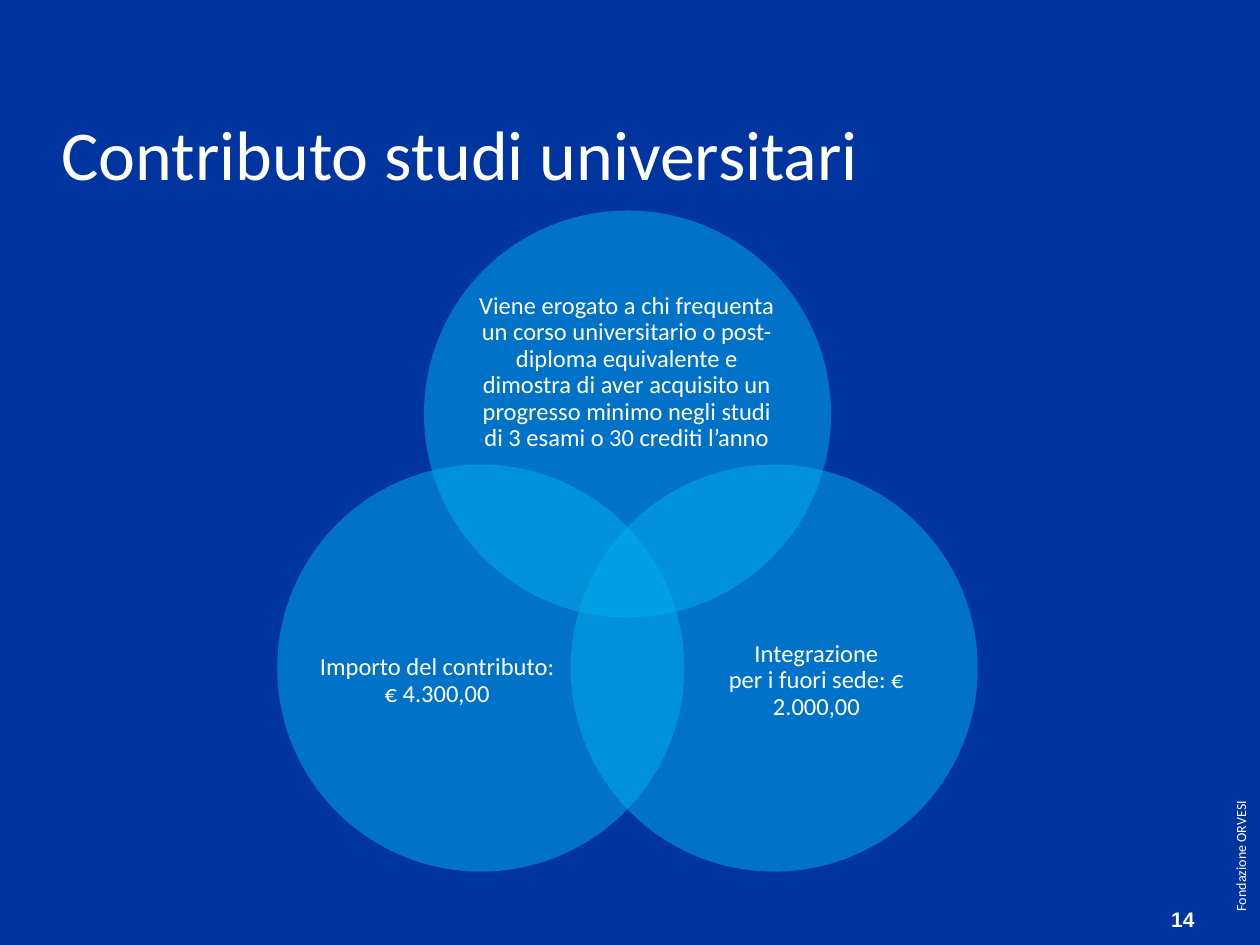
"""Build the slide on the university study grant as a three-circle Venn diagram."""
from dataclasses import dataclass
from math import cos, radians, sin

from lxml.etree import SubElement
from pptx import Presentation
from pptx.dml.color import RGBColor
from pptx.enum.shapes import MSO_SHAPE
from pptx.enum.text import MSO_ANCHOR, MSO_AUTO_SIZE, PP_ALIGN
from pptx.oxml.ns import qn
from pptx.util import Pt

TITLE = "Contributo studi universitari"
FOOTER = "Fondazione ORVESI"
PAGE_NUMBER = "14"
CIRCLES = [
    {"angle": -90, "text_area": (272.9, 160.6, 170.6, 104.4), "lines": [
        "Viene erogato a chi frequenta un corso universitario o post-diploma "
        "equivalente e dimostra di aver acquisito un progresso minimo negli "
        "studi di 3 esami o 30 crediti l’anno"]},
    {"angle": 30, "text_area": (396.7, 325.4, 139.7, 127.4), "lines": [
        "Integrazione", "per i fuori sede: € 2.000,00"]},
    {"angle": 150, "text_area": (180, 325.4, 139.7, 127.4), "lines": [
        "Importo del contributo: € 4.300,00"]},
]
VENN_CENTER = (358.6, 333.4)
VENN_RADIUS = 96.8
CIRCLE_SIZE = 232.6


@dataclass(frozen=True)
class Theme:
    """Colours, fonts and type sizes."""
    background: RGBColor = RGBColor(0x00, 0x34, 0x9E)
    circle: RGBColor = RGBColor(0x00, 0xB0, 0xF0)
    text: RGBColor = RGBColor(0xFF, 0xFF, 0xFF)
    circle_alpha: int = 50000
    font: str = "Calibri"
    number_font: str = "Arial"
    title_size: int = 40
    body_size: int = 14
    number_size: int = 12
    footer_size: int = 8


THEME = Theme()


def write(box, lines, size, font=THEME.font, align=PP_ALIGN.LEFT, bold=False):
    """Write lines as runs of one paragraph and return the paragraph."""
    para = box.text_frame.paragraphs[0]
    para.alignment = align
    for index, line in enumerate(lines):
        if index:
            para.add_line_break()
        span = para.add_run()
        span.text = line
        span.font.name = font
        span.font.size = Pt(size)
        span.font.bold = bold
        span.font.color.rgb = THEME.text
    return para


def add_box(page, area, anchor=MSO_ANCHOR.TOP):
    """Add a wrapping text box at an area given in points."""
    box = page.shapes.add_textbox(*map(Pt, area))
    box.text_frame.word_wrap = True
    box.text_frame.vertical_anchor = anchor
    return box


def add_title(page):
    """Place and format the title placeholder."""
    title = page.shapes.title
    title.left, title.top, title.width, title.height = map(Pt, (28, 18, 605, 96.5))
    title.text_frame.auto_size = MSO_AUTO_SIZE.NONE
    title.text_frame.vertical_anchor = MSO_ANCHOR.BOTTOM
    write(title, [TITLE], THEME.title_size)


def add_circle(page, angle):
    """Add a translucent circle at an angle around the diagram centre."""
    left = VENN_CENTER[0] + VENN_RADIUS * cos(radians(angle)) - CIRCLE_SIZE / 2
    top = VENN_CENTER[1] + VENN_RADIUS * sin(radians(angle)) - CIRCLE_SIZE / 2
    circle = page.shapes.add_shape(
        MSO_SHAPE.OVAL, Pt(left), Pt(top), Pt(CIRCLE_SIZE), Pt(CIRCLE_SIZE))
    circle.shadow.inherit = False
    circle.fill.solid()
    circle.fill.fore_color.rgb = THEME.circle
    color = circle.element.spPr.find(f"{qn('a:solidFill')}/{qn('a:srgbClr')}")
    SubElement(color, qn("a:alpha"), val=str(THEME.circle_alpha))
    circle.line.fill.background()


def add_circle_text(page, area, lines):
    """Add the centred text of a circle."""
    box = add_box(page, area, MSO_ANCHOR.MIDDLE)
    frame = box.text_frame
    frame.margin_left = frame.margin_top = frame.margin_right = frame.margin_bottom = 0
    para = write(box, lines, THEME.body_size, align=PP_ALIGN.CENTER)
    para.line_spacing = 0.9
    para.space_after = Pt(5)


def main():
    """Build and save the deck."""
    deck = Presentation()
    deck.slide_width, deck.slide_height = Pt(720), Pt(540)
    page = deck.slides.add_slide(deck.slide_layouts[5])
    page.background.fill.solid()
    page.background.fill.fore_color.rgb = THEME.background

    footer = add_box(page, (584.6, 394.6, 249.1, 17.3))
    footer.rotation = 270
    write(footer, [FOOTER], THEME.footer_size)

    for circle in CIRCLES:
        add_circle(page, circle["angle"])
        add_circle_text(page, circle["text_area"], circle["lines"])

    add_title(page)
    number = add_box(page, (620.6, 515.5, 69.1, 19.4), MSO_ANCHOR.MIDDLE)
    write(number, [PAGE_NUMBER], THEME.number_size, THEME.number_font,
          PP_ALIGN.RIGHT, True)
    deck.save("out.pptx")


if __name__ == "__main__":
    main()
